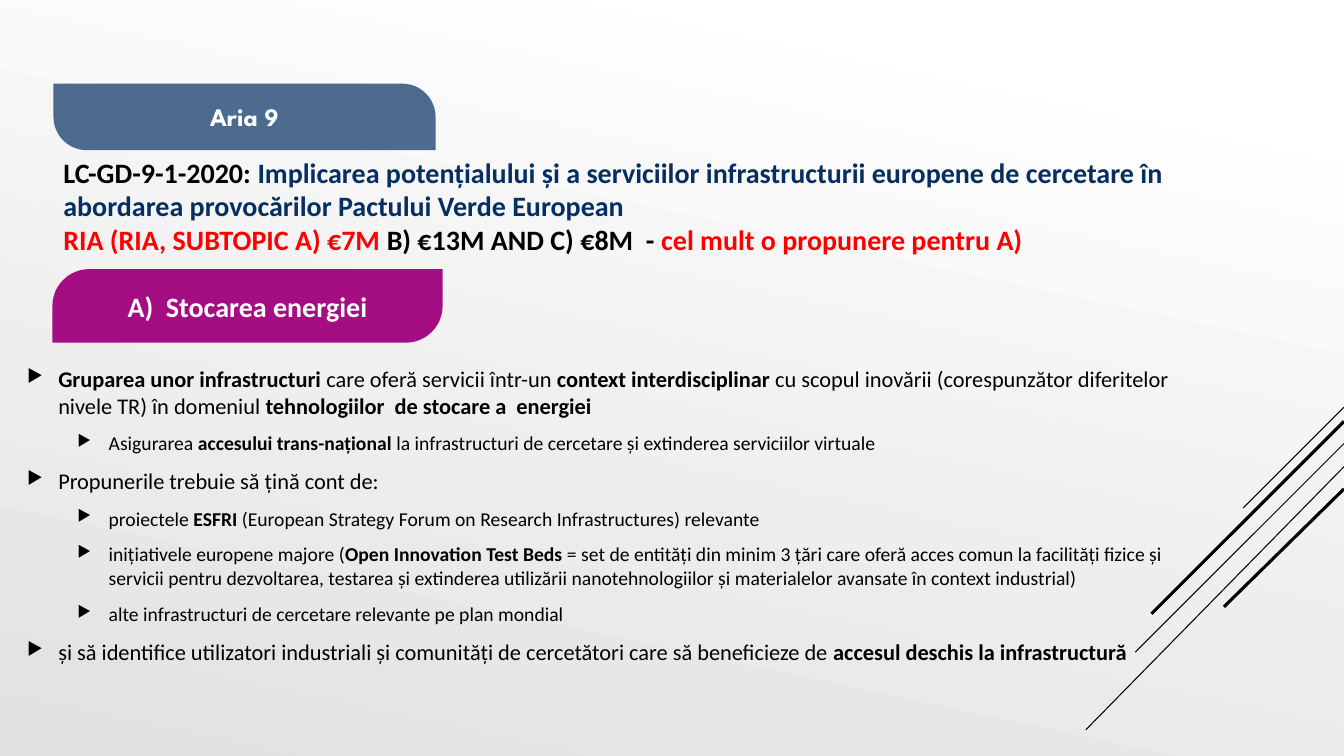
from dataclasses import dataclass

from lxml.etree import SubElement as Sub
from pptx import Presentation
from pptx.dml.color import RGBColor as Rgb
from pptx.enum.shapes import MSO_CONNECTOR as Link, MSO_SHAPE as Kind
from pptx.enum.text import MSO_ANCHOR as Anchor, PP_ALIGN as Align
from pptx.oxml.ns import qn
from pptx.util import Inches, Pt

BLACK, WHITE, NAVY, RED, PLUM = "000000", "FFFFFF", "052F61", "FF0000", "A50E82"


@dataclass
class Ray:
    top: float
    left: float
    low: float
    width: float = 0.75


@dataclass
class Badge:
    text: str
    box: tuple
    bends: tuple
    fill: str
    size: int
    face: str = "Calibri"
    alpha: int = 100


@dataclass
class Item:
    text: str
    level: int = 0


RAYS = [
    Ray(4.04, 12.33, 5.04),
    Ray(4.63, 10.77, 7.24),
    Ray(4.4, 11.26, 6.47),
    Ray(4.18, 11.42, 6.09, 2.25),
    Ray(4.85, 12.14, 6.02, 2.25),
]
BADGES = [
    Badge("A)  Stocarea energiei", (0.52, 2.67, 3.87, 0.73), (0.5, 0), PLUM, 20),
    Badge("Aria 9", (0.53, 0.83, 3.79, 0.66), (0, 0.5), NAVY, 18, "League Spartan", 70),
]
TITLE = [
    [
        ("LC-GD-9-1-2020: ", BLACK),
        ("Implicarea potențialului și a serviciilor infrastructurii europene de "
         "cercetare în abordarea provocărilor Pactului Verde European", NAVY),
    ],
    [
        ("RIA (RIA, SUBTOPIC A) €7M ", RED),
        ("B) €13M AND C) €8M  - ", BLACK),
        ("cel mult o propunere pentru A)", RED),
    ],
]
ITEMS = [
    Item("*Gruparea unor infrastructuri *care oferă servicii într-un *context "
         "interdisciplinar *cu scopul inovării (corespunzător diferitelor nivele TR) "
         "în domeniul *tehnologiilor  de stocare a  energiei*"),
    Item("Asigurarea *accesului trans-național *la infrastructuri de cercetare și "
         "extinderea serviciilor virtuale", 1),
    Item("Propunerile trebuie să țină cont de:"),
    Item("proiectele *ESFRI* (European Strategy Forum on Research Infrastructures) "
         "relevante", 1),
    Item("inițiativele europene majore (*Open Innovation Test Beds *= set de entități "
         "din minim 3 țări care oferă acces comun la facilități fizice și servicii "
         "pentru dezvoltarea, testarea și extinderea utilizării nanotehnologiilor și "
         "materialelor avansate în context industrial)", 1),
    Item("alte infrastructuri de cercetare relevante pe plan mondial", 1),
    Item("și să identifice utilizatori industriali și comunități de cercetători care să "
         "beneficieze de *accesul deschis la infrastructură*"),
]


def tint(code: str) -> Rgb:
    return Rgb.from_string(code)


def write(para, text: str, *, size: int, color: str = BLACK, bold: bool = False,
          face: str = "Calibri") -> None:
    run = para.add_run()
    run.text = text
    font = run.font
    font.size, font.bold, font.name = Pt(size), bold, face
    font.color.rgb = tint(color)


def paint(slide) -> None:
    fill = slide.background.fill
    fill.gradient()
    fill.gradient_angle = 258
    for stop, place, color in zip(fill.gradient_stops, (0.1, 1), (WHITE, "E1E1E1")):
        stop.position = place
        stop.color.rgb = tint(color)


def draw_ray(slide, ray: Ray) -> None:
    ends = [Inches(n) for n in (13.33, ray.top, ray.left, ray.low)]
    line = slide.shapes.add_connector(Link.STRAIGHT, *ends)
    line.line.color.rgb = tint(BLACK)
    line.line.width = Pt(ray.width)
    Sub(line._element.spPr, qn("a:effectLst"))


def draw_badge(slide, badge: Badge) -> None:
    box = [Inches(n) for n in badge.box]
    shape = slide.shapes.add_shape(Kind.ROUND_2_DIAG_RECTANGLE, *box)
    shape.shadow.inherit = False
    for i, bend in enumerate(badge.bends):
        shape.adjustments[i] = bend
    shape.fill.solid()
    shape.fill.fore_color.rgb = tint(badge.fill)
    shape.line.fill.background()
    if badge.alpha < 100:
        color = shape._element.spPr.find(qn("a:solidFill"))[0]
        Sub(color, qn("a:alpha"), val=str(badge.alpha * 1000))
    frame = shape.text_frame
    frame.vertical_anchor = Anchor.MIDDLE
    para = frame.paragraphs[0]
    para.alignment = Align.CENTER
    write(para, badge.text, size=badge.size, color=WHITE, bold=True, face=badge.face)


def add_text(slide, *box: float):
    frame = slide.shapes.add_textbox(*[Inches(n) for n in box]).text_frame
    frame.word_wrap = True
    return frame


def draw_title(slide) -> None:
    para = add_text(slide, 0.53, 1.49, 12.03, 1.65).paragraphs[0]
    for i, line in enumerate(TITLE):
        if i:
            para.add_line_break()
        for text, color in line:
            write(para, text, size=20, color=color, bold=True)


def add_bullet(para, level: int) -> None:
    props = para._p.get_or_add_pPr()
    props.set("marL", str(Inches(0.31 + 0.5 * level)))
    props.set("indent", str(Inches(-0.31)))
    Sub(Sub(props, qn("a:buClr")), qn("a:srgbClr"), val=BLACK)
    Sub(props, qn("a:buSzPct"), val="80000")
    Sub(props, qn("a:buChar"), char="▶")


def draw_items(slide) -> None:
    frame = add_text(slide, 0.17, 3.57, 11.8, 4.36)
    for i, item in enumerate(ITEMS):
        para = frame.add_paragraph() if i else frame.paragraphs[0]
        size = 16 - 2 * item.level
        para.level = item.level
        add_bullet(para, item.level)
        para.space_before = Pt(0.2 * size if i else 0)
        para.space_after = Pt(6)
        for j, text in enumerate(item.text.split("*")):
            if text:
                write(para, text, size=size, bold=j % 2 == 1)


def main() -> None:
    deck = Presentation()
    deck.slide_width, deck.slide_height = Inches(13.33), Inches(7.5)
    slide = deck.slides.add_slide(deck.slide_layouts[6])
    paint(slide)
    for ray in RAYS:
        draw_ray(slide, ray)
    draw_title(slide)
    draw_items(slide)
    for badge in BADGES:
        draw_badge(slide, badge)
    deck.save("out.pptx")


if __name__ == "__main__":
    main()
